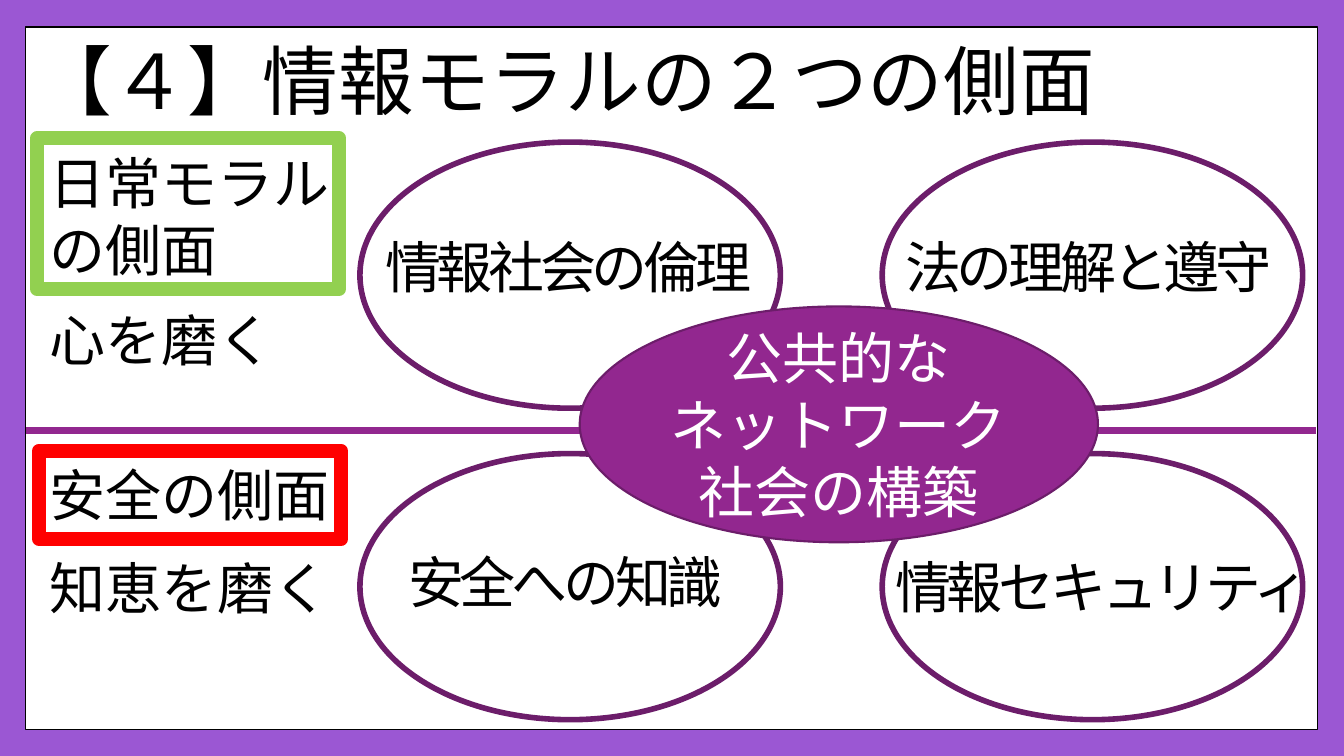
import pptx
import pptx.util
import pptx.dml.color
import pptx.enum.shapes
import pptx.enum.text
import pptx.oxml.ns
import lxml.etree

Inches = pptx.util.Inches
Pt = pptx.util.Pt
KIND = pptx.enum.shapes.MSO_SHAPE
ALIGN = pptx.enum.text.PP_ALIGN
ANCHOR = pptx.enum.text.MSO_ANCHOR
PLUM, DARK = "92278F", "6C1D6A"


def color(code):
    return pptx.dml.color.RGBColor.from_string(code)


def write(shape, text, size=40, font="Arial", ink="000000", align=ALIGN.LEFT,
          anchor=ANCHOR.TOP, wrap=True, track=0, lead=None):
    frame = shape.text_frame
    frame.word_wrap = wrap
    frame.vertical_anchor = anchor
    frame.text = text
    for para in frame.paragraphs:
        para.alignment = align
        if lead:
            para.line_spacing = lead
        for run in para.runs:
            run.font.size = Pt(size)
            run.font.name = font
            run.font.color.rgb = color(ink)
            if track:
                run.font._element.set("spc", str(track * 100))


def label(slide, box, text, **style):
    write(slide.shapes.add_textbox(*map(Inches, box)), text, **style)


def draw(slide, kind, box, line, width, fill=None):
    shape = slide.shapes.add_shape(kind, *map(Inches, box))
    shape.shadow.inherit = False
    if fill:
        shape.fill.solid()
        shape.fill.fore_color.rgb = color(fill)
    else:
        shape.fill.background()
    shape.line.color.rgb = color(line)
    shape.line.width = Pt(width)
    return shape


def panel(slide, box):
    """White panel, dividing line and title."""
    left, top, wide, high = box
    draw(slide, KIND.RECTANGLE, box, "000000", 1, "FFFFFF")
    mid = Inches(top + 4)
    rule = slide.shapes.add_connector(
        pptx.enum.shapes.MSO_CONNECTOR.STRAIGHT,
        Inches(left + 0.01), mid, Inches(left + wide - 0.02), mid)
    rule.line.color.rgb = color(PLUM)
    rule.line.width = Pt(5.5)
    lxml.etree.SubElement(rule._element.spPr, pptx.oxml.ns.qn("a:effectLst"))
    label(slide, (left + 0.01, top, wide - 0.02, 1.14), "【４】情報モラルの２つの側面",
          size=54, font="Lato", anchor=ANCHOR.MIDDLE, lead=0.9)


def topics(slide, box):
    """Four ovals in a grid, the centre oval, then the labels on top."""
    left, top, wide, high = box
    oval_w, oval_h = 4.17, 2.64
    # Label offset from its oval, and label width
    names = [("情報社会の倫理", 0.15, 0.85, 3.92), ("法の理解と遵守", 0.13, 0.85, 3.92),
             ("安全への知識", 0.38, 0.88, 3.39), ("情報セキュリティ", 0.03, 0.93, 4.45)]
    spots = [(left + col * (wide - oval_w), top + row * (high - oval_h))
             for row in range(2) for col in range(2)]
    for x, y in spots:
        draw(slide, KIND.OVAL, (x, y, oval_w, oval_h), DARK, 4)
    core = draw(slide, KIND.OVAL, (left + 2.18, top + 1.63, 5.14, 2.34), DARK, 1.5, PLUM)
    write(core, "公共的な\nネットワーク社会の構築", font="Lato", ink="FFFFFF",
          align=ALIGN.CENTER, anchor=ANCHOR.MIDDLE)
    for (x, y), (name, dx, dy, width) in zip(spots, names):
        label(slide, (x + dx, y + dy, width, 0.77), name, track=-3)


def aspect(slide, box, name, note, gap, edge):
    """Framed heading with a note below it."""
    left, top, wide, high = box
    label(slide, (0.39, top + 0.05, 3.45, high - 0.1), name)
    label(slide, (0.39, top + gap, 3.01, 0.77), note, wrap=False)
    draw(slide, KIND.RECTANGLE, box, edge, 10)


def main():
    deck = pptx.Presentation()
    deck.slide_width, deck.slide_height = Inches(13.33), Inches(7.5)
    slide = deck.slides.add_slide(deck.slide_layouts[6])
    slide.background.fill.solid()
    slide.background.fill.fore_color.rgb = color("9B57D3")
    panel(slide, (0.25, 0.27, 12.82, 6.97))
    topics(slide, (3.57, 1.41, 9.35, 5.73))
    aspect(slide, (0.37, 1.37, 2.99, 1.5), "日常モラル\nの側面", "心を磨く", 1.61, "92D050")
    aspect(slide, (0.39, 4.47, 2.99, 0.88), "安全の側面", "知恵を磨く", 0.97, "FF0000")
    deck.save("out.pptx")


if __name__ == "__main__":
    main()
